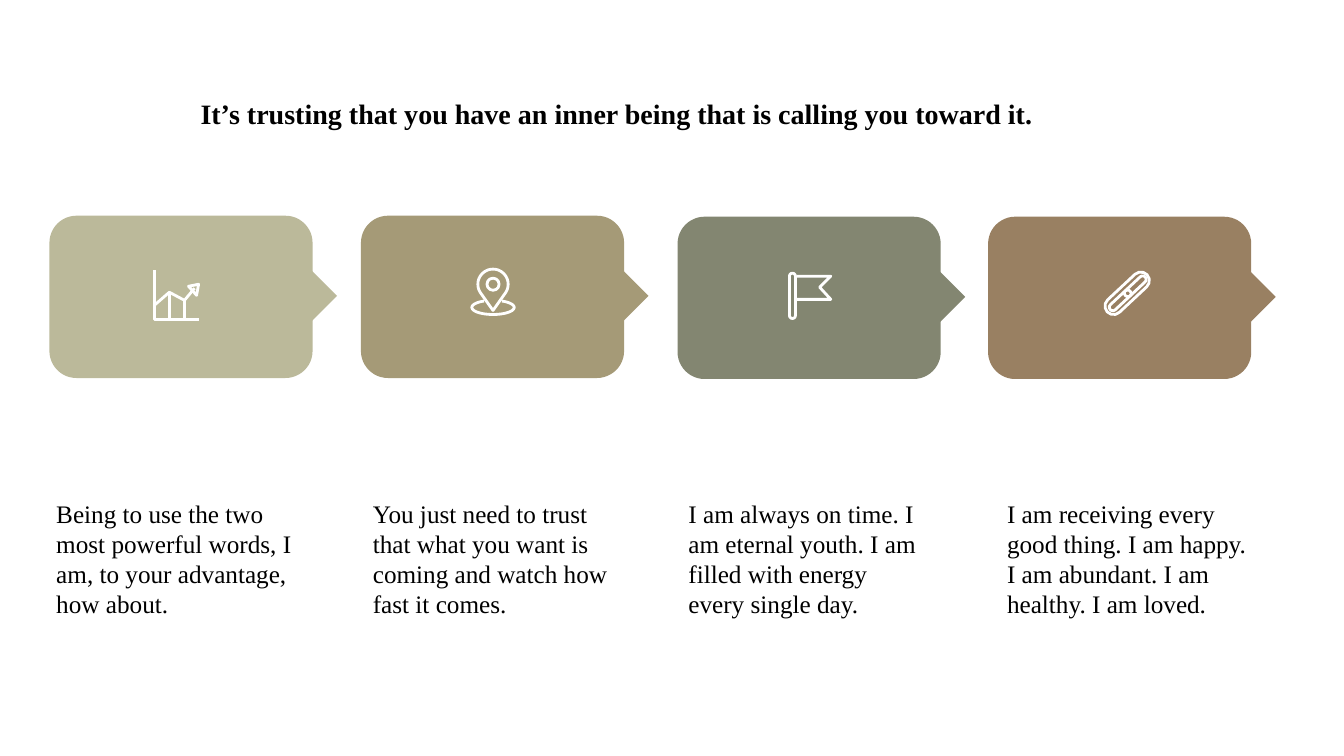
from math import cos, radians, sin
from pptx import Presentation
from pptx.dml.color import RGBColor
from pptx.enum.shapes import MSO_SHAPE
from pptx.enum.text import MSO_AUTO_SIZE
from pptx.util import Emu, Pt

SCALE = 9144
WHITE = "FFFFFF"
BLACK = "000000"


def px(size):
    return Emu(round(size * SCALE))


def tint(target, code):
    target.rgb = RGBColor.from_string(code)


def style(target, form):
    for key, value in form.items():
        setattr(target, key, value)


def stroke(shape):
    shape.shadow.inherit = False
    shape.fill.background()
    shape.line.width = Pt(2)
    tint(shape.line.color, WHITE)


def solid(slide, kind, box, code, turn=0):
    shape = slide.shapes.add_shape(kind, *map(px, box))
    shape.shadow.inherit = False
    shape.rotation = turn
    shape.fill.solid()
    tint(shape.fill.fore_color, code)
    shape.line.fill.background()


def ring(slide, kind, box, turn=0, round_by=None):
    shape = slide.shapes.add_shape(kind, *map(px, box))
    shape.rotation = turn
    if round_by is not None:
        shape.adjustments[0] = round_by
    stroke(shape)


def trace(slide, x, y, points, close=False):
    spots = [(px(x + a), px(y + b)) for a, b in points]
    pen = slide.shapes.build_freeform(*spots[0], scale=1.0)
    pen.add_line_segments(spots[1:], close=close)
    stroke(pen.convert_to_shape())


def arc(x, y, wide, high, start, end):
    return [(x + wide * cos(radians(a)), y + high * sin(radians(a)))
            for a in range(start, end + 1, 5)]


def draw_chart(slide, x, y):
    trace(slide, x, y, [(2, 2), (2, 51), (46, 51)])
    trace(slide, x, y, [(2, 37), (17, 24), (32, 32), (42, 20)])
    trace(slide, x, y, [(36, 18), (46, 16), (44, 27)], True)
    for left, top in [(17, 24), (32, 32)]:
        trace(slide, x, y, [(left, top), (left, 51)])


def draw_pin(slide, x, y):
    trace(slide, x, y, arc(22, 39, 21, 7, -65, 245))
    trace(slide, x, y, arc(22, 16, 15, 15, 145, 395) + [(22, 42)], True)
    ring(slide, MSO_SHAPE.OVAL, (x + 16, y + 10, 12, 12))


def draw_flag(slide, x, y):
    ring(slide, MSO_SHAPE.ROUNDED_RECTANGLE, (x + 1, y + 1, 6, 45), 0, 0.5)
    trace(slide, x, y, [(8, 4), (42, 4), (31, 15), (42, 27), (8, 27)])


def draw_link(slide, x, y):
    for mid, down, wide, high in [(23, 21, 54, 17), (31, 14, 27, 7), (16, 28, 27, 7)]:
        box = (x + mid - wide / 2, y + down - high / 2, wide, high)
        ring(slide, MSO_SHAPE.ROUNDED_RECTANGLE, box, 317, 0.5)


def card(slide, box, code, draw, shift):
    x, y, wide, high = box
    solid(slide, MSO_SHAPE.ROUNDED_RECTANGLE, box, code)
    solid(slide, MSO_SHAPE.RIGHT_TRIANGLE, (x + wide - 18, y + 62, 35, 35), code, 225)
    draw(slide, x + shift[0], y + shift[1])


def label(slide, box, words, form):
    frame = slide.shapes.add_textbox(*map(px, box)).text_frame
    style(frame, {"word_wrap": True, "auto_size": MSO_AUTO_SIZE.SHAPE_TO_FIT_TEXT})
    run = frame.paragraphs[0].add_run()
    run.text = words
    style(run.font, {"name": "Times New Roman", **form})
    tint(run.font.color, BLACK)


CARDS = [
    (49, 214, "BBB99A", draw_chart, (102, 52), 46,
     "Being to use the two most powerful words, I am, to your advantage, how about."),
    (358, 214, "A59A77", draw_pin, (109, 52), 360,
     "You just need to trust that what you want is coming and watch how fast it comes."),
    (672, 215, "838671", draw_flag, (110, 55), 673,
     "I am always on time. I am eternal youth. I am filled with energy every single day."),
    (980, 215, "998062", draw_link, (115, 55), 989,
     "I am receiving every good thing. I am happy. I am abundant. I am healthy. I am loved."),
]


def main():
    deck = Presentation()
    style(deck, {"slide_width": px(1333), "slide_height": px(750)})
    slide = deck.slides.add_slide(deck.slide_layouts[6])
    for x, y, code, draw, shift, left, words in CARDS:
        card(slide, (x, y, 261, 161), code, draw, shift)
        label(slide, (left, 489, 257, 131), words, {"size": Pt(18)})
    label(slide, (189, 91, 955, 44),
          "It’s trusting that you have an inner being that is calling you toward it.",
          {"size": Pt(20), "bold": True})
    deck.save("out.pptx")


if __name__ == "__main__":
    main()
